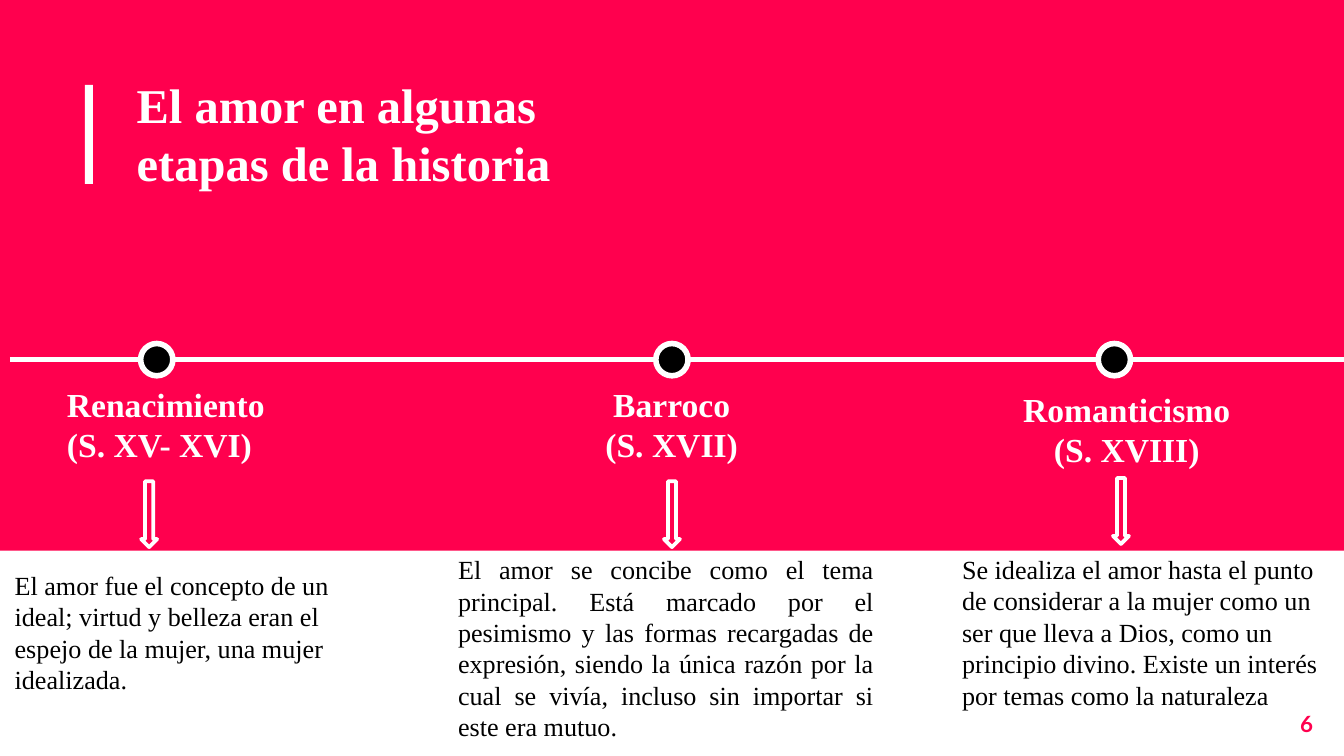
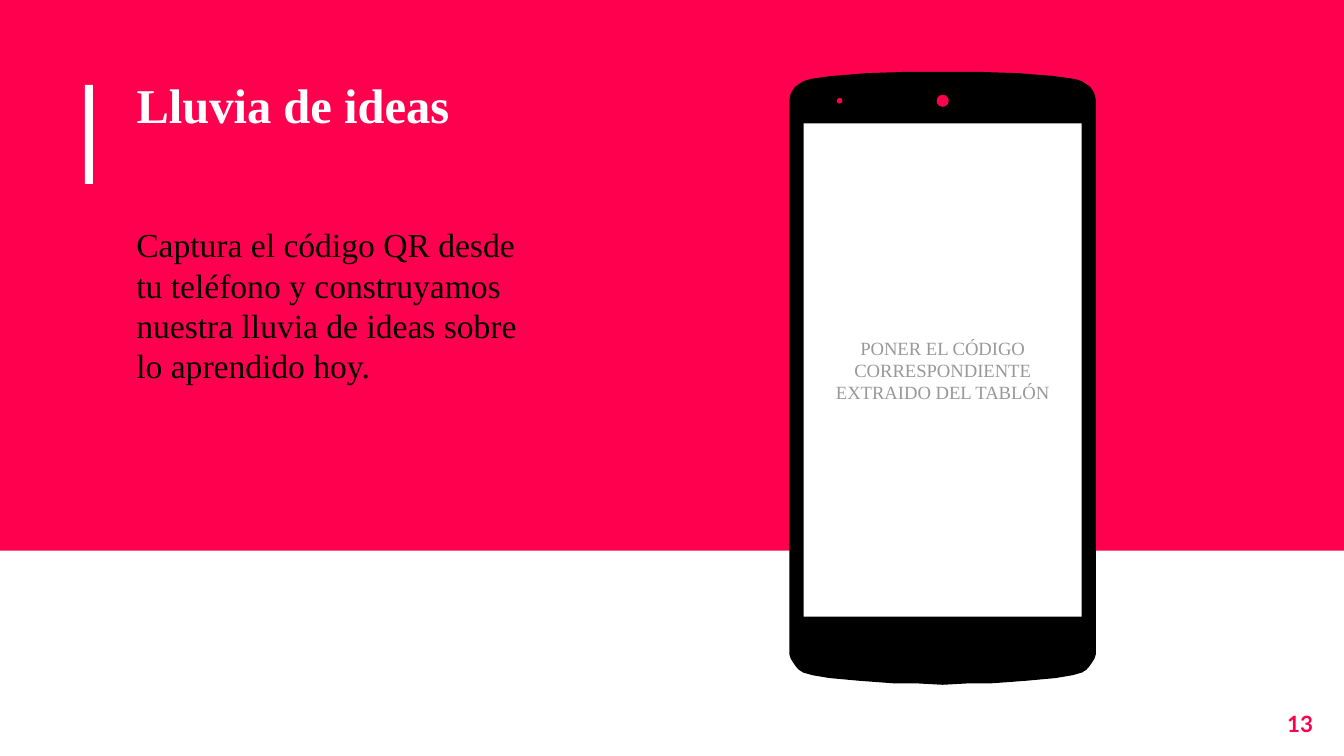
from dataclasses import dataclass

from lxml.etree import SubElement
from pptx import Presentation
from pptx.dml.color import RGBColor
from pptx.enum.shapes import MSO_CONNECTOR as Connector, MSO_SHAPE as Preset
from pptx.enum.text import MSO_ANCHOR as Anchor, MSO_AUTO_SIZE as AutoSize, PP_ALIGN as Align
from pptx.oxml.ns import qn
from pptx.util import Pt


@dataclass(frozen=True)
class Theme:
    accent: str = "FF004E"
    light: str = "FFFFFF"
    dark: str = "000000"
    hint: str = "999999"
    text_font: str = "Times New Roman"
    number_font: str = "Lato"
    title_size: float = 26
    heading_size: float = 18
    body_size: float = 14
    number_size: float = 12
    hint_size: float = 10


THEME = Theme()


def write(frame, text, *, size, color, font=THEME.text_font, bold=False,
          align=Align.LEFT, anchor=Anchor.TOP, inset=7.2, space_before=0):
    """Fill a text frame, one paragraph per line of text."""
    frame.word_wrap = True
    frame.auto_size = AutoSize.NONE
    frame.vertical_anchor = anchor
    frame.margin_left = frame.margin_right = Pt(7.2)
    frame.margin_top = frame.margin_bottom = Pt(inset)
    frame.text = text
    for paragraph in frame.paragraphs:
        paragraph.alignment = align
        paragraph.space_before = Pt(space_before)
        for run in paragraph.runs:
            run.font.name = font
            run.font.size = Pt(size)
            run.font.bold = bold
            run.font.color.rgb = RGBColor.from_string(color)


class Deck:
    def __init__(self, theme):
        self.theme = theme
        self.presentation = Presentation()
        self.presentation.slide_width = Pt(720)
        self.presentation.slide_height = Pt(405)
        self.layout = self.presentation.slide_layouts[5]
        self.slide = None

    def add_slide(self, title, number):
        first = self.slide is None
        self.slide = self.presentation.slides.add_slide(self.layout)
        if first:
            self.decorate_layout()
        placeholder = self.slide.shapes.title
        placeholder.left, placeholder.top = Pt(66), Pt(33)
        placeholder.width, placeholder.height = Pt(254), Pt(68)
        write(placeholder.text_frame, title, size=self.theme.title_size,
              color=self.theme.light, bold=True)
        self.text(number, 667.5, 373.5, 43, 31, size=self.theme.number_size,
                  color=self.theme.accent, font=self.theme.number_font,
                  bold=True, align=Align.RIGHT)

    def decorate_layout(self):
        """Put the band and the title bar behind everything on the shared layout."""
        band = self.shape(Preset.RECTANGLE, 0, 0, 720, 295, self.theme.accent)
        bar = self.shape(Preset.RECTANGLE, 45.5, 45.5, 4.3, 53, self.theme.light)
        for position, decoration in enumerate((band, bar), start=2):
            self.layout.shapes.element.insert(position, decoration.element)

    def text(self, text, left, top, width, height, **text_format):
        box = self.slide.shapes.add_textbox(Pt(left), Pt(top), Pt(width), Pt(height))
        write(box.text_frame, text, **text_format)

    def paint(self, shape, fill, line=None, line_width=1):
        shape.shadow.inherit = False
        shape.fill.solid()
        shape.fill.fore_color.rgb = RGBColor.from_string(fill)
        if line:
            shape.line.color.rgb = RGBColor.from_string(line)
            shape.line.width = Pt(line_width)
        else:
            shape.line.fill.background()
        return shape

    def shape(self, preset, left, top, width, height, fill, **line_format):
        shape = self.slide.shapes.add_shape(preset, Pt(left), Pt(top), Pt(width), Pt(height))
        return self.paint(shape, fill, **line_format)

    def dot(self, center_x, center_y, diameter, fill, **line_format):
        radius = diameter / 2
        self.shape(Preset.OVAL, center_x - radius, center_y - radius,
                   diameter, diameter, fill, **line_format)

    def horizontal_line(self, left, right, y, color, width):
        line = self.slide.shapes.add_connector(
            Connector.STRAIGHT, Pt(left), Pt(y), Pt(right), Pt(y))
        line.line.color.rgb = RGBColor.from_string(color)
        line.line.width = Pt(width)
        SubElement(line.element.spPr, qn("a:effectLst"))

    def mirrored_outline(self, center_x, half, fill):
        """Draw a closed outline from its right half, given as offsets from the axis."""
        right = [(center_x + x, y) for x, y in half]
        left = [(center_x - x, y) for x, y in reversed(half[1:-1])]
        points = [(Pt(x), Pt(y)) for x, y in right + left]
        builder = self.slide.shapes.build_freeform(*points[0], scale=1)
        builder.add_line_segments(points[1:], close=True)
        self.paint(builder.convert_to_shape(), fill, line=fill, line_width=0.75)


@dataclass(frozen=True)
class Stage:
    heading: str
    heading_box: tuple
    dot_x: float
    arrow_x: float
    arrow_top: float
    summary: str
    summary_box: tuple
    heading_align: Align = Align.CENTER
    summary_align: Align = Align.LEFT


STAGES = (
    Stage("Renacimiento\n(S. XV- XVI)", (28.8, 198.5, 130.5, 32.5), 84, 79.9, 257.8,
          "El amor fue el concepto de un ideal; virtud y belleza eran el espejo "
          "de la mujer, una mujer idealizada.",
          (0.8, 301.5, 204.5, 75), heading_align=Align.LEFT),
    Stage("Barroco (S. XVII)", (313.3, 198.5, 93, 32.5), 360, 360, 257.8,
          "El amor se concibe como el tema principal. Está marcado por el pesimismo "
          "y las formas recargadas de expresión, siendo la única razón por la cual "
          "se vivía, incluso sin importar si este era mutuo.",
          (238.3, 293, 237, 108.7), summary_align=Align.JUSTIFY),
    Stage("Romanticismo (S. XVIII)", (537, 201, 133.2, 32.5), 597, 600.5, 256.1,
          "Se idealiza el amor hasta el punto de considerar a la mujer como un ser "
          "que lleva a Dios, como un principio divino. Existe un interés por temas "
          "como la naturaleza",
          (508.3, 293, 211.7, 92)),
)

PHONE_HALF = (
    (0, 38.9), (20.2, 38.9), (40.7, 39.6), (58.3, 41), (64.8, 41.8), (69.5, 42.5),
    (72.4, 43.2), (74.5, 43.9), (76.7, 45.4), (78.8, 46.8), (80.3, 49), (81, 50.4),
    (81.7, 53.3), (81.7, 56.2), (81.7, 347.8), (81.7, 350.6), (81, 352.8),
    (79.6, 355), (78.1, 357.1), (76.7, 358.6), (74.5, 360), (72, 360.7),
    (69.5, 361.4), (60.5, 362.9), (45.4, 364.3), (36, 365), (25.2, 365.8),
    (13, 365.8), (0, 366.5),
)


def build_history(deck):
    theme = deck.theme
    timeline_y, arrow_width = 192.7, 8.6
    deck.add_slide("El amor en algunas etapas de la historia", "6")
    deck.horizontal_line(5.3, 720, timeline_y, theme.light, 3)
    for stage in STAGES:
        deck.dot(stage.dot_x, timeline_y, 17.3, theme.dark, line=theme.light, line_width=3)
        deck.text(stage.heading, *stage.heading_box, size=theme.heading_size,
                  color=theme.light, bold=True, align=stage.heading_align)
        deck.shape(Preset.DOWN_ARROW, stage.arrow_x - arrow_width / 2, stage.arrow_top,
                   arrow_width, 35.3, theme.accent, line=theme.light, line_width=2)
        deck.text(stage.summary, *stage.summary_box, size=theme.body_size,
                  color=theme.dark, align=stage.summary_align, inset=3.6)


def build_brainstorm(deck):
    theme = deck.theme
    phone_x = 505
    deck.add_slide("Lluvia de ideas", "13")
    deck.mirrored_outline(phone_x, PHONE_HALF, theme.dark)
    deck.dot(phone_x, 54, 6.5, theme.accent)
    deck.dot(449.8, 54, 3, theme.accent)
    deck.text("Captura el código QR desde tu teléfono y construyamos nuestra lluvia "
              "de ideas sobre lo aprendido hoy.", 66, 113, 235, 275,
              size=theme.heading_size, color=theme.dark, space_before=6)
    screen = deck.shape(Preset.RECTANGLE, phone_x - 74.5, 66.2, 149, 264.2, theme.light)
    write(screen.text_frame, "PONER EL CÓDIGO CORRESPONDIENTE EXTRAIDO DEL TABLÓN",
          size=theme.hint_size, color=theme.hint, align=Align.CENTER, anchor=Anchor.MIDDLE)


def main():
    deck = Deck(THEME)
    build_history(deck)
    build_brainstorm(deck)
    deck.presentation.save("out.pptx")


if __name__ == "__main__":
    main()
